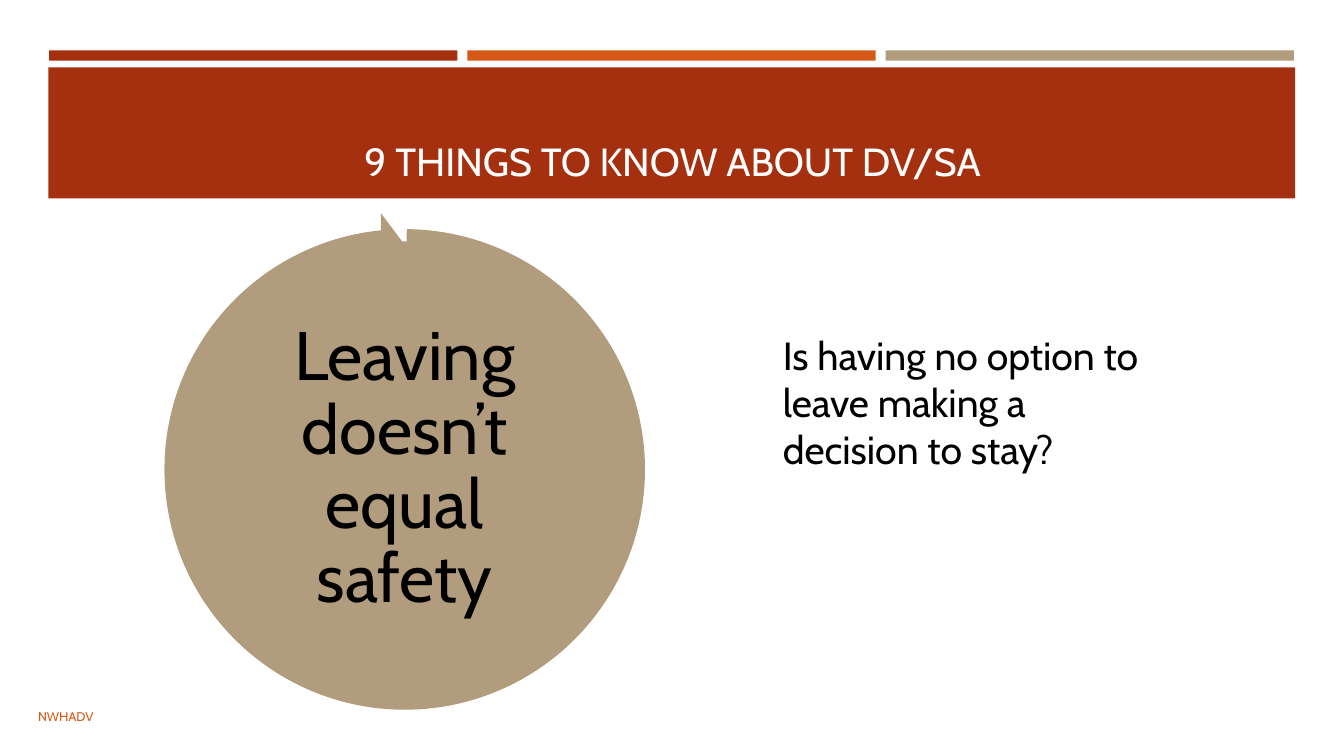
from dataclasses import dataclass

from pptx import Presentation
from pptx import util as u
from pptx.dml.color import RGBColor
from pptx.enum import shapes, text

# Content
TITLE = "9 THINGS TO KNOW ABOUT DV/SA"
STATEMENT = "Leaving doesn’t equal safety"
QUESTION = "Is having no option to leave making a decision to stay?"
FOOTER = "NWHADV"


@dataclass(frozen=True)
class Theme:
    font: str = "Cabin"
    red: str = "A5300F"
    orange: str = "D55816"
    tan: str = "B19C7D"
    white: str = "FFFFFF"
    black: str = "000000"
    heading_size: int = 28
    statement_size: int = 49
    footer_size: int = 9


theme = Theme()

# Layout, in centimetres
STRIPES = [theme.red, theme.orange, theme.tan]
STRIPE_LEFT, STRIPE_TOP, STRIPE_WIDTH, STRIPE_HEIGHT = 1.24, 1.27, 10.29, 0.26
STRIPE_PITCH = 10.54
BAND = (1.22, 1.7, 31.42, 3.3)
TITLE_BOX = (1.63, 1.96, 30.63, 2.82)
QUESTION_BOX = (19.48, 8.23, 9.63, 3.84)
FOOTER_BOX = (0.71, 17.55, 4.32, 1.02)
BUBBLE_CENTER = (10.2, 11.83)
DISC_SIZE, ARROW_SIZE, STATEMENT_SIZE = 11.56, 12.98, 7.7
ARROW_ADJUSTMENTS = (0.051, 3.275, 158.427, 162.297, 0.059)


def lengths(box):
    return [u.Cm(value) for value in box]


def centered(size):
    x, y = BUBBLE_CENTER
    return x - size / 2, y - size / 2, size, size


def add_filled(slide, kind, box, color):
    shape = slide.shapes.add_shape(kind, *lengths(box))
    shape.shadow.inherit = False
    shape.fill.solid()
    shape.fill.fore_color.rgb = RGBColor.from_string(color)
    shape.line.fill.background()
    return shape


def write(shape, words, size, color, align=text.PP_ALIGN.LEFT,
          anchor=text.MSO_ANCHOR.TOP):
    frame = shape.text_frame
    frame.text = words
    frame.word_wrap = True
    frame.auto_size = text.MSO_AUTO_SIZE.NONE
    frame.vertical_anchor = anchor
    paragraph = frame.paragraphs[0]
    paragraph.alignment = align
    paragraph.font.name = theme.font
    paragraph.font.size = u.Pt(size)
    paragraph.font.color.rgb = RGBColor.from_string(color)
    return frame


def add_text(slide, box, *args, **options):
    return write(slide.shapes.add_textbox(*lengths(box)), *args, **options)


def add_header(slide):
    for index, color in enumerate(STRIPES):
        left = STRIPE_LEFT + index * STRIPE_PITCH
        add_filled(slide, shapes.MSO_SHAPE.RECTANGLE,
                   (left, STRIPE_TOP, STRIPE_WIDTH, STRIPE_HEIGHT), color)
    add_filled(slide, shapes.MSO_SHAPE.RECTANGLE, BAND, theme.red)

    title = slide.shapes.title
    title.left, title.top, title.width, title.height = lengths(TITLE_BOX)
    write(title, TITLE, theme.heading_size, theme.white,
          text.PP_ALIGN.CENTER, text.MSO_ANCHOR.BOTTOM)
    # Bring the title in front of its band
    title.element.getparent().append(title.element)


def add_bubble(slide):
    disc = add_filled(slide, shapes.MSO_SHAPE.OVAL, centered(DISC_SIZE), theme.tan)
    disc.line.color.rgb = RGBColor.from_string(theme.white)
    disc.line.width = u.Pt(1.75)

    frame = add_text(slide, centered(STATEMENT_SIZE), STATEMENT,
                     theme.statement_size, theme.black,
                     text.PP_ALIGN.CENTER, text.MSO_ANCHOR.MIDDLE)
    frame.margin_left = frame.margin_right = u.Cm(0.18)
    frame.margin_top = frame.margin_bottom = u.Cm(0.18)
    frame.paragraphs[0].line_spacing = 0.9

    arrow = add_filled(slide, shapes.MSO_SHAPE.CIRCULAR_ARROW,
                       centered(ARROW_SIZE), theme.tan)
    for index, value in enumerate(ARROW_ADJUSTMENTS):
        arrow.adjustments[index] = value


def main():
    presentation = Presentation()
    presentation.slide_width = u.Cm(33.87)
    presentation.slide_height = u.Cm(19.05)
    slide = presentation.slides.add_slide(presentation.slide_layouts[5])

    add_header(slide)
    add_bubble(slide)
    # Question and footer
    add_text(slide, QUESTION_BOX, QUESTION, theme.heading_size, theme.black)
    add_text(slide, FOOTER_BOX, FOOTER, theme.footer_size, theme.orange,
             anchor=text.MSO_ANCHOR.MIDDLE)
    presentation.save("out.pptx")


if __name__ == "__main__":
    main()
